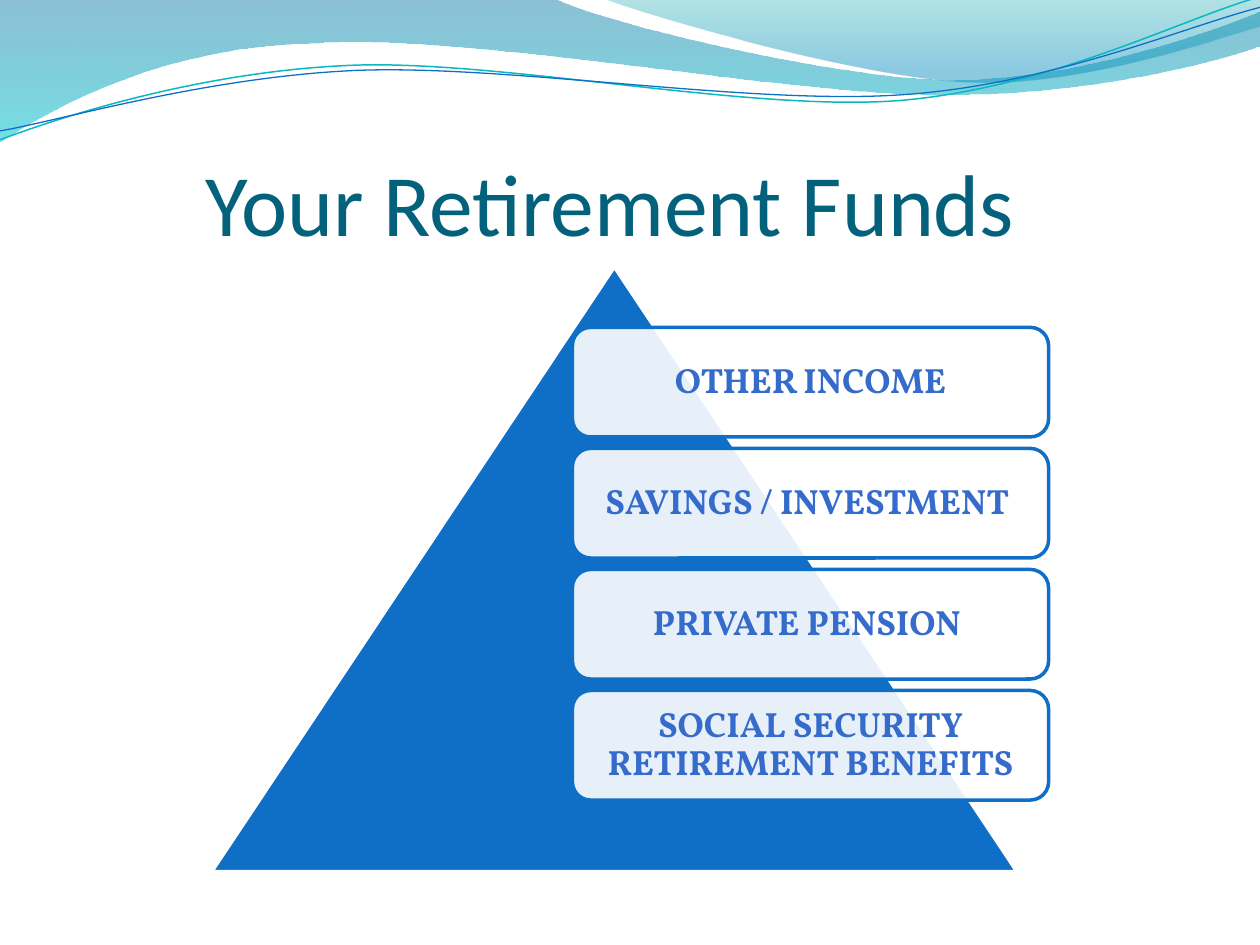
import dataclasses
import math

import pptx
import pptx.dml.color
import pptx.enum.shapes
import pptx.enum.text
import pptx.oxml.ns
import pptx.util

Cm = pptx.util.Cm
Pt = pptx.util.Pt
Shape = pptx.enum.shapes.MSO_SHAPE
Anchor = pptx.enum.text.MSO_ANCHOR
qn = pptx.oxml.ns.qn


@dataclasses.dataclass(frozen=True)
class Theme:
    blue: str = "0F6FC6"
    teal: str = "0AB8BF"
    white: str = "FFFFFF"
    title: str = "04617B"
    label: str = "356BCA"
    band: tuple = ((0, "0074A1", 45), (1, "00C6CF", 55))
    wave: tuple = ((0, "00A1A9", 30), (0.8, "008BBF", 45))
    head_font: str = "Calibri"
    card_font: str = "Vollkorn"
    head_size: int = 50
    card_size: int = 20


def color(code):
    return pptx.dml.color.RGBColor.from_string(code)


def fade(shape, *shares):
    """Set the opacity, in percent, of each fill colour; call before the line is set."""
    nodes = list(shape._element.spPr.iter(qn("a:srgbClr")))
    for node, share in zip(nodes, shares):
        node.append(node.makeelement(qn("a:alpha"), {"val": str(share * 1000)}))


def write(shape, text, *, font, size, ink, bold=False, anchor=Anchor.MIDDLE,
          inset=(0, 0, 0, 0), space=1.0):
    """Fill a shape with centred text; inset is left, top, right, bottom in cm."""
    frame = shape.text_frame
    frame.text = text
    frame.word_wrap = True
    frame.auto_size = pptx.enum.text.MSO_AUTO_SIZE.NONE
    frame.vertical_anchor = anchor
    (frame.margin_left, frame.margin_top,
     frame.margin_right, frame.margin_bottom) = map(Cm, inset)
    para = frame.paragraphs[0]
    para.alignment = pptx.enum.text.PP_ALIGN.CENTER
    para.line_spacing = space
    face = para.runs[0].font
    face.name, face.size, face.bold = font, Pt(size), bold
    face.color.rgb = color(ink)


def turn(point, angle, pivot=(12.7, 1.48)):
    """Turn a point about the pivot, clockwise on the slide, by an angle in degrees."""
    x, y = point[0] - pivot[0], point[1] - pivot[1]
    cos, sin = math.cos(math.radians(angle)), math.sin(math.radians(angle))
    return pivot[0] + x * cos - y * sin, pivot[1] + x * sin + y * cos


def bend(shape, parts):
    """Join the line segments of each three-point part into one cubic curve."""
    lines = iter(list(shape._element.spPr.iter(qn("a:lnTo"))))
    for part in parts:
        nodes = [next(lines) for _ in part]
        if len(nodes) == 1:
            continue
        cubic = nodes[0].makeelement(qn("a:cubicBezTo"), {})
        nodes[0].addprevious(cubic)
        for node in nodes:
            cubic.append(node[0])
            node.getparent().remove(node)


class Deck:
    def __init__(self, theme):
        self.theme = theme
        self.file = pptx.Presentation()
        self.file.slide_width, self.file.slide_height = Cm(25.4), Cm(19.05)
        self.slide = self.file.slides.add_slide(self.file.slide_layouts[5])

    def title(self, text, box, inset):
        head = self.slide.shapes.title
        head.left, head.top, head.width, head.height = map(Cm, box)
        write(head, text, font=self.theme.head_font, size=self.theme.head_size,
              ink=self.theme.title, anchor=Anchor.BOTTOM, inset=inset)

    def trail(self, start, parts, close, tilt=0):
        """Draw lines (one-point parts) and cubic curves (three-point parts)."""
        points = [start] + [point for part in parts for point in part]
        points = [tuple(map(Cm, turn(point, -tilt))) for point in points]
        maker = self.slide.shapes.build_freeform(*points[0])
        maker.add_line_segments(points[1:], close=close)
        shape = maker.convert_to_shape()
        bend(shape, parts)
        shape.rotation = tilt
        shape.shadow.inherit = False
        return shape

    def sweep(self, start, parts, stops):
        """Draw a closed outline with a gradient that runs from top to bottom."""
        shape = self.trail(start, parts, True)
        shape.fill.gradient()
        shape.fill.gradient_angle = 270
        for mark, (place, code, _) in zip(shape.fill.gradient_stops, stops):
            mark.position = place
            mark.color.rgb = color(code)
        fade(shape, *(stop[2] for stop in stops))
        shape.line.fill.background()

    def curve(self, start, parts, ink, width):
        shape = self.trail(start, parts, False, tilt=-2.7)
        shape.fill.background()
        self.edge(shape, ink, width)

    def edge(self, shape, ink, width=2):
        shape.line.color.rgb = color(ink)
        shape.line.width = Pt(width)

    def block(self, kind, box, fill, ink, share=100):
        shape = self.slide.shapes.add_shape(kind, *map(Cm, box))
        shape.shadow.inherit = False
        shape.fill.solid()
        shape.fill.fore_color.rgb = color(fill)
        if share < 100:
            fade(shape, share)
        self.edge(shape, ink)
        return shape

    def card(self, text, box):
        shape = self.block(Shape.ROUNDED_RECTANGLE, box, self.theme.white,
                           self.theme.blue, share=90)
        write(shape, text, font=self.theme.card_font, size=self.theme.card_size,
              ink=self.theme.label, bold=True, inset=(0.3,) * 4, space=0.9)


def main():
    theme = Theme()
    deck = Deck(theme)

    deck.sweep((0, 0), [
        [(11.18, -0.03)],
        [(12.09, 0.43), (16.87, 1.6), (19.25, 1.6)],
        [(21.67, 1.6), (24.33, 0.66), (25.4, 0.23)],
        [(25.43, 0.91)],
        [(24.97, 1.12), (22.1, 1.93), (18.95, 1.91)],
        [(15.8, 1.91), (9.7, 0.71), (6.53, 0.86)],
        [(3.28, 0.91), (1.17, 2.11), (-0.03, 2.87)],
    ], theme.band)
    deck.sweep((12.17, -0.03), [
        [(12.93, 0.28), (17.32, 1.57), (19.53, 1.65)],
        [(21.74, 1.75), (24.41, 0.81), (25.4, 0.53)],
        [(25.4, 0)],
    ], theme.wave)
    deck.curve((0, 2.82), [
        [(1.22, 2.36), (4.01, 1.45), (7.04, 1.32)],
        [(10.03, 1.19), (15.06, 2.26), (18.11, 2.03)],
        [(21.16, 1.78), (23.83, 0.38), (25.35, -0.05)],
    ], theme.teal, 0.85)
    deck.curve((0, 2.64), [
        [(1.19, 2.44), (4.17, 1.55), (7.19, 1.42)],
        [(10.24, 1.3), (15.16, 2.13), (18.21, 1.91)],
        [(21.23, 1.7), (23.9, 0.53), (25.4, 0.15)],
    ], theme.blue, 0.75)

    deck.title("Your Retirement Funds", (1.27, 1.96, 22.86, 3.17), (0, 0.13, 0.8, 0))

    deck.block(Shape.ISOSCELES_TRIANGLE, (4.27, 5.38, 16.23, 12.19),
               theme.blue, theme.white)
    funds = ("OTHER INCOME", "SAVINGS / INVESTMENT ", "PRIVATE PENSION ",
             "SOCIAL SECURITY RETIREMENT BENEFITS")
    top, pitch = 6.6, 2.44
    for row, fund in enumerate(funds):
        deck.card(fund, (11.54, top + row * pitch, 9.6, 2.21))

    deck.file.save("out.pptx")


if __name__ == "__main__":
    main()
